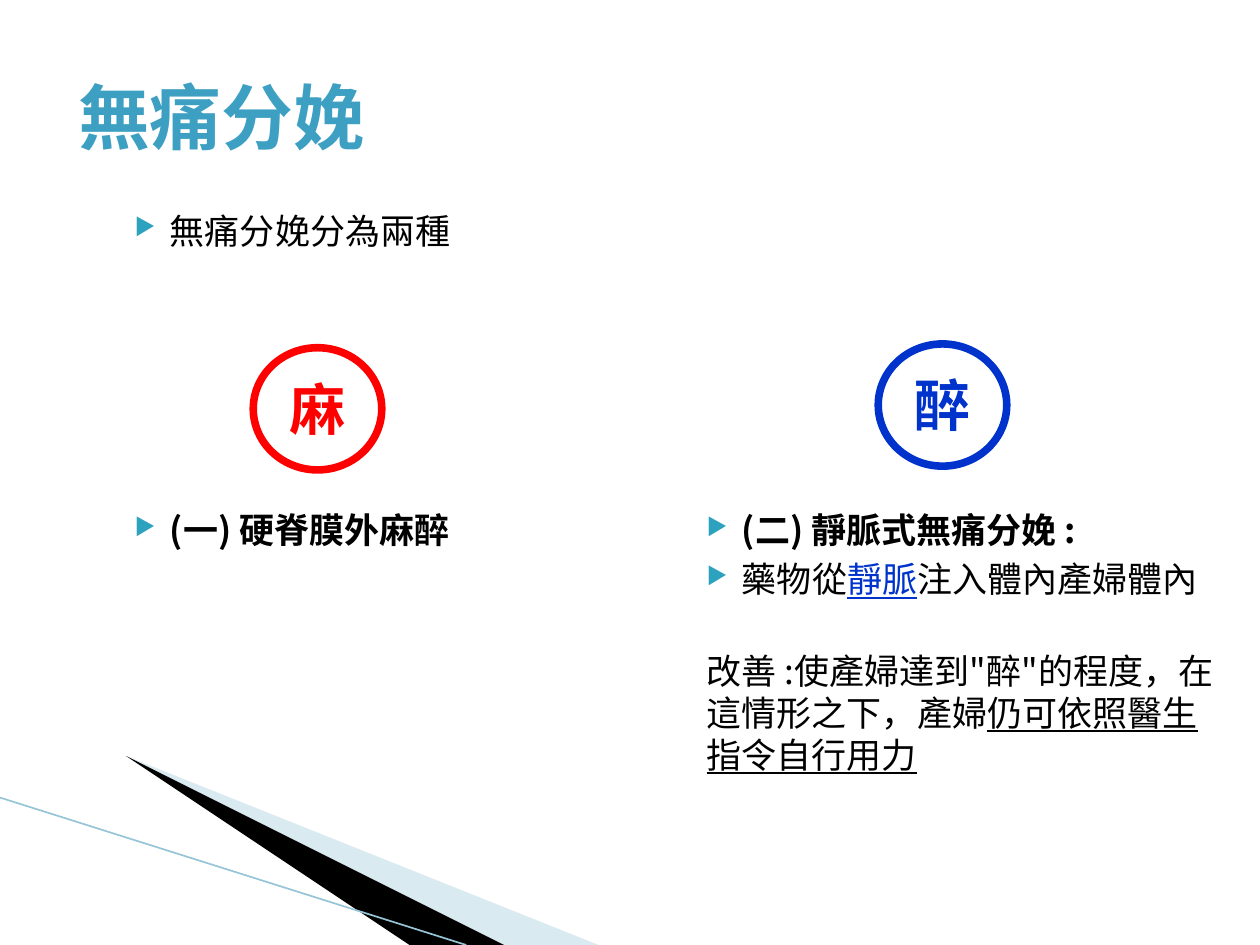
"""Build a slide that compares two kinds of painless childbirth."""
from lxml import etree
from pptx import Presentation
from pptx.dml.color import RGBColor
from pptx.enum.shapes import MSO_CONNECTOR, MSO_SHAPE
from pptx.enum.text import MSO_ANCHOR, PP_ALIGN
from pptx.oxml.ns import qn
from pptx.util import Inches, Pt

OVAL = MSO_SHAPE.OVAL
LINE = MSO_CONNECTOR.STRAIGHT
MIDDLE, TOP = MSO_ANCHOR.MIDDLE, MSO_ANCHOR.TOP
CENTER = PP_ALIGN.CENTER
FONT = "Noto Sans CJK SC"
WIDE, HIGH = 10, 7.5
LEFT, RIGHT = 0.85, 5.39
HEAD, ROW = 1.61, 3.99
COLORS = {"title": "3DA0C2", "text": "000000", "mark": "2DA2BF",
          "red": "FF0000", "blue": "0033CC", "pale": "A0CBDC",
          "dark": "000000", "edge": "97C5D8"}


def color(name):
    """Return a named colour."""
    return RGBColor.from_string(COLORS[name])


def add(parent, tag, **attrs):
    """Append an XML element to a parent."""
    return etree.SubElement(parent, qn(tag), attrs)


def style(para, size, name, bold=False):
    """Set the font of a whole paragraph."""
    font = para.font
    font.size, font.bold, font.name = Pt(size), bold, FONT
    font.color.rgb = color(name)
    add(para._p.pPr.find(qn("a:defRPr")), "a:ea", typeface=FONT)


def indent(para, left, first=0):
    """Set the left margin and first line indent in inches."""
    props = para._p.get_or_add_pPr()
    props.set("marL", str(Inches(left)))
    props.set("indent", str(Inches(first)))
    return props


def bullet(para):
    """Give a paragraph a small triangle mark."""
    props = indent(para, 0.4, -0.28)
    add(add(props, "a:buClr"), "a:srgbClr", val=COLORS["mark"])
    add(props, "a:buSzPct", val="68000")
    add(props, "a:buChar", char="▶")


def write(para, parts, size=20, bold=False):
    """Fill a paragraph with (text, colour, underline) parts."""
    style(para, size, "text", bold)
    para.line_spacing = Pt(24)
    for text, name, under in parts:
        run = para.add_run()
        run.text = text
        if name:
            run.font.color.rgb = color(name)
        if under:
            run.font.underline = True


def box(slide, left, top, width, height):
    """Add a wrapping text box and return its frame."""
    shape = slide.shapes.add_textbox(*map(Inches, (left, top, width, height)))
    shape.text_frame.word_wrap = True
    return shape.text_frame


def point(slide, left, top, width, text, bold=False):
    """Add a text box that opens with one bulleted line."""
    frame = box(slide, left, top, width, 0.45)
    para = frame.paragraphs[0]
    bullet(para)
    write(para, [(text, None, False)], bold=bold)
    return frame


def badge(slide, left, top, text, name):
    """Add a ring with one large character."""
    ring = slide.shapes.add_shape(OVAL, *map(Inches, (left, top, 1.02, 0.97)))
    ring.shadow.inherit = False
    ring.fill.background()
    ring.line.color.rgb = color(name)
    ring.line.width = Pt(4.33)
    frame = ring.text_frame
    frame.margin_left = frame.margin_right = frame.margin_bottom = 0
    frame.margin_top = Inches(0.08)
    frame.word_wrap = False
    frame.vertical_anchor = MIDDLE
    para = frame.paragraphs[0]
    para.text, para.alignment = text, CENTER
    para.line_spacing = Pt(32)
    style(para, 32, name, True)


def wedge(slide, points, name, alpha=100):
    """Add a filled sliver through the given points."""
    start, *rest = points
    build = slide.shapes.build_freeform(*start, scale=Inches(1))
    build.add_line_segments(rest, close=True)
    shape = build.convert_to_shape()
    shape.shadow.inherit = False
    shape.line.fill.background()
    shape.fill.solid()
    shape.fill.fore_color.rgb = color(name)
    if alpha < 100:
        tint = shape._element.spPr.find(qn("a:solidFill"))[0]
        add(tint, "a:alpha", val=str(alpha * 1000))


def swoosh(slide):
    """Draw the corner ornament."""
    wedge(slide, [(0.55, 6.5), (5.95, HIGH), (4.56, HIGH)], "pale", 40)
    wedge(slide, [(0.53, 6.49), (4.57, HIGH), (3.7, HIGH)], "dark")
    ends = map(Inches, (0, 6.33, 3.7, HIGH))
    edge = slide.shapes.add_connector(LINE, *ends)
    edge.line.color.rgb = color("edge")
    edge.line.width = Pt(0.95)
    add(edge._element.spPr, "a:effectLst")


def title(slide, text):
    """Place and format the title."""
    shape = slide.shapes.title
    shape.left, shape.top, shape.width, shape.height = map(
        Inches, (0.51, 0.52, 2.5, 0.79))
    frame = shape.text_frame
    frame.word_wrap = False
    frame.vertical_anchor = MIDDLE
    para = frame.paragraphs[0]
    para.text, para.alignment = text, CENTER
    style(para, 41, "title", True)


def detail(frame):
    """Add the notes on the intravenous method."""
    para = frame.add_paragraph()
    bullet(para)
    para.space_before = Pt(4)
    write(para, [("藥物從", None, False), ("靜脈", "blue", True),
                 ("注入體內產婦體內", None, False)])
    para = frame.add_paragraph()
    indent(para, 0.12)
    para.space_before = Pt(28)
    write(para, [("改善 :使產婦達到\"醉\"的程度，在這情形之下，產婦", None, False),
                 ("仍可依照醫生指令自行用力", None, True)])


def main():
    """Build and save the slide."""
    deck = Presentation()
    deck.slide_width, deck.slide_height = Inches(WIDE), Inches(HIGH)
    slide = deck.slides.add_slide(deck.slide_layouts[5])
    swoosh(slide)
    title(slide, "無痛分娩")
    point(slide, LEFT, HEAD, 8.18, "無痛分娩分為兩種")
    point(slide, LEFT, ROW, 3.62, "(一) 硬脊膜外麻醉", True)
    frame = point(slide, RIGHT, ROW, 4.41, "(二) 靜脈式無痛分娩 :", True)
    frame.vertical_anchor = TOP
    detail(frame)
    badge(slide, 2.01, 2.76, "麻", "red")
    badge(slide, 6.97, 2.73, "醉", "blue")
    deck.save("out.pptx")


if __name__ == "__main__":
    main()
